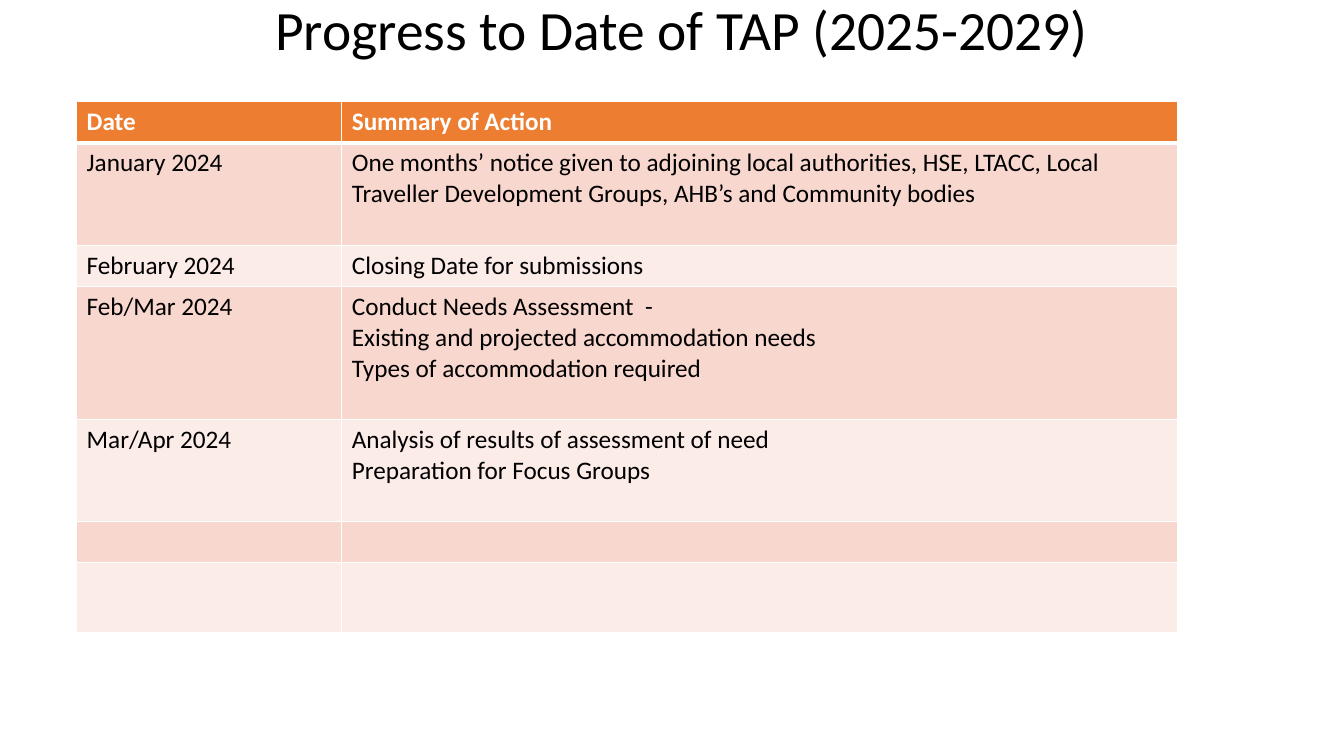
"""Build the slide that lists progress to date on the TAP (2025-2029)."""
from dataclasses import dataclass

from lxml.etree import SubElement
from pptx import Presentation
from pptx.dml.color import RGBColor
from pptx.enum.text import MSO_ANCHOR, PP_ALIGN
from pptx.oxml.ns import qn
from pptx.util import Inches, Pt


@dataclass(frozen=True)
class Theme:
    font: str = "Calibri"
    title_size: float = 39.6
    table_size: float = 18
    text: str = "000000"
    header_text: str = "FFFFFF"
    header_fill: str = "ED7D31"
    dark_band: str = "F8D7CE"
    light_band: str = "FCECE8"
    border: str = "FFFFFF"


theme = Theme()


def style_text(text_frame, size, color, bold=False):
    for paragraph in text_frame.paragraphs:
        for run in paragraph.runs:
            run.font.name = theme.font
            run.font.size = Pt(size)
            run.font.bold = bold
            run.font.color.rgb = RGBColor.from_string(color)


def add_borders(cell, top, bottom):
    properties = cell._tc.get_or_add_tcPr()
    for side, width in (("L", 1), ("R", 1), ("T", top), ("B", bottom)):
        line = SubElement(properties, qn(f"a:ln{side}"), w=str(Pt(width)))
        fill = SubElement(line, qn("a:solidFill"))
        SubElement(fill, qn("a:srgbClr"), val=theme.border)


presentation = Presentation()
presentation.slide_width = Inches(13.33)
presentation.slide_height = Inches(7.5)
slide = presentation.slides.add_slide(presentation.slide_layouts[5])

title = slide.shapes.title
title.left, title.top = Inches(1.01), Inches(-0.02)
title.width, title.height = Inches(11.5), Inches(0.69)
title.text_frame.text = "Progress to Date of TAP (2025-2029)"
title.text_frame.vertical_anchor = MSO_ANCHOR.MIDDLE
title.text_frame.paragraphs[0].alignment = PP_ALIGN.CENTER
title.text_frame.paragraphs[0].line_spacing = 0.9
style_text(title.text_frame, theme.title_size, theme.text)

rows = [
    (0.40, "Date", "Summary of Action"),
    (1.02, "January 2024",
     "One months’ notice given to adjoining local authorities, HSE, LTACC, Local "
     "Traveller Development Groups, AHB’s and Community bodies"),
    (0.41, "February 2024", "Closing Date for submissions"),
    (1.32, "Feb/Mar 2024",
     "Conduct Needs Assessment  -\n"
     "Existing and projected accommodation needs\n"
     "Types of accommodation required"),
    (1.01, "Mar/Apr 2024",
     "Analysis of results of assessment of need\nPreparation for Focus Groups"),
    (0.41, "", ""),
    (0.69, "", ""),
]
column_widths = (2.63, 8.29)
table = slide.shapes.add_table(
    len(rows), len(column_widths), Inches(0.76), Inches(1.01),
    Inches(sum(column_widths)), Inches(sum(row[0] for row in rows)),
).table
for column, width in zip(table.columns, column_widths):
    column.width = Inches(width)

for row_index, (height, *texts) in enumerate(rows):
    table.rows[row_index].height = Inches(height)
    is_header = row_index == 0
    band = theme.dark_band if row_index % 2 else theme.light_band
    for column_index, text in enumerate(texts):
        cell = table.cell(row_index, column_index)
        add_borders(cell, top=3 if row_index == 1 else 1, bottom=3 if is_header else 1)
        cell.fill.solid()
        cell.fill.fore_color.rgb = RGBColor.from_string(theme.header_fill if is_header else band)
        if text:
            cell.text_frame.text = text
            color = theme.header_text if is_header else theme.text
            style_text(cell.text_frame, theme.table_size, color, bold=is_header)

presentation.save("out.pptx")
